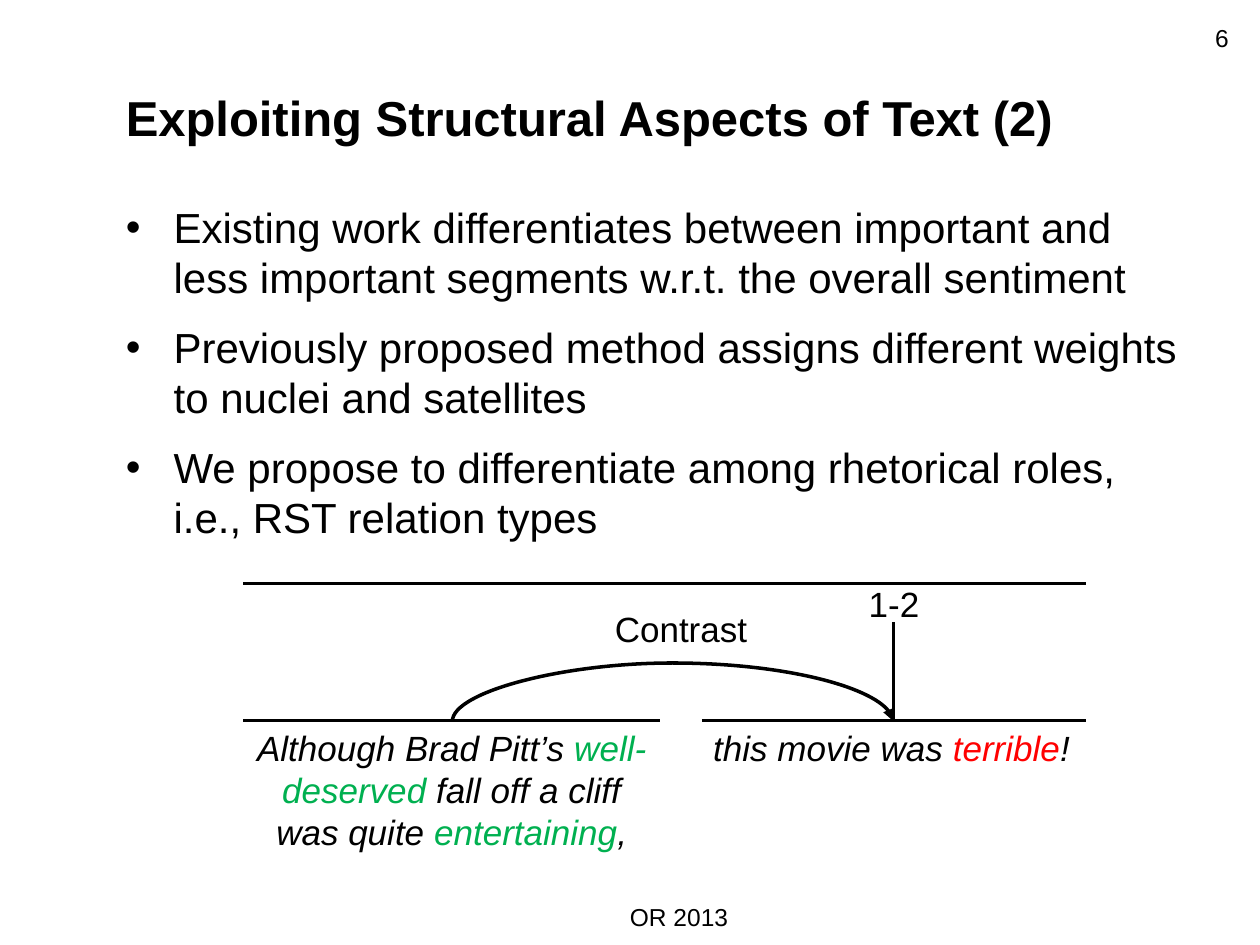
from pptx import Presentation
from pptx.dml.color import RGBColor
from pptx.enum import shapes, text
from pptx.oxml import ns, xmlchemy
from pptx.util import Inches, Pt

BLACK = RGBColor(0x00, 0x00, 0x00)
GREEN = RGBColor(0x00, 0xB0, 0x50)
RED = RGBColor(0xFF, 0x00, 0x00)
LEFT, CENTER, RIGHT = text.PP_ALIGN.LEFT, text.PP_ALIGN.CENTER, text.PP_ALIGN.RIGHT


def add_xml(parent, tag, **attributes):
    element = xmlchemy.OxmlElement(tag)
    for key, value in attributes.items():
        element.set(key, value)
    parent.append(element)
    return element


class SlideWriter:
    font_name = "Arial"
    line_width = Pt(2)

    def __init__(self, slide):
        self.slide = slide

    def text(self, box, paragraphs, size, align=LEFT, bold=None, italic=None,
             wrap=True, middle=False, bullet=False, gap=0):
        """Each paragraph is a list of (wording, colour) runs."""
        frame = self.slide.shapes.add_textbox(*map(Inches, box)).text_frame
        frame.word_wrap = wrap
        if middle:
            frame.vertical_anchor = text.MSO_ANCHOR.MIDDLE
        for index, runs in enumerate(paragraphs):
            paragraph = frame.add_paragraph() if index else frame.paragraphs[0]
            paragraph.alignment = align
            if index and gap:
                paragraph.space_before = Pt(gap)
            if bullet:
                properties = paragraph._p.get_or_add_pPr()
                properties.set("marL", str(Inches(0.38)))
                properties.set("indent", str(-Inches(0.38)))
                add_xml(properties, "a:buFont", typeface=self.font_name)
                add_xml(properties, "a:buChar", char="•")
            font = paragraph.font
            font.name, font.size, font.bold, font.italic = self.font_name, Pt(size), bold, italic
            for wording, colour in runs:
                run = paragraph.add_run()
                run.text = wording
                run.font.color.rgb = colour

    def line(self, start, end, kind=shapes.MSO_CONNECTOR.STRAIGHT):
        connector = self.slide.shapes.add_connector(kind, *map(Inches, start + end))
        connector.line.color.rgb = BLACK
        connector.line.width = self.line_width
        add_xml(connector._element.spPr, "a:effectLst")
        return connector

    def arc_arrow(self, start_x, end_x, base_y, rise):
        """Curved connector turned by 90 degrees, bulging upwards by rise."""
        thickness = 0.01
        middle, half = (start_x + end_x) / 2, (end_x - start_x) / 2
        arc = self.line((middle + thickness / 2, base_y + half),
                        (middle - thickness / 2, base_y - half),
                        shapes.MSO_CONNECTOR.CURVE)
        properties = arc._element.spPr
        properties.find(ns.qn("a:xfrm")).set("rot", str(90 * 60000))
        adjustments = properties.find(ns.qn("a:prstGeom")).get_or_add_avLst()
        add_xml(adjustments, "a:gd", name="adj1",
                fmla=f"val {round(rise / thickness * 100000)}")
        add_xml(arc.line._get_or_add_ln(), "a:tailEnd", type="triangle")


def main():
    deck = Presentation()
    deck.slide_width, deck.slide_height = Inches(10), Inches(7.5)
    writer = SlideWriter(deck.slides.add_slide(deck.slide_layouts[6]))

    # Title and bullets
    writer.text((0.9, 0.3, 8.6, 1.25),
                [[("Exploiting Structural Aspects of Text (2)", BLACK)]],
                28, bold=True, middle=True)
    points = [
        "Existing work differentiates between important and less important "
        "segments w.r.t. the overall sentiment",
        "Previously proposed method assigns different weights to nuclei and satellites",
        "We propose to differentiate among rhetorical roles, i.e., RST relation types",
    ]
    writer.text((0.9, 1.55, 8.6, 5.43), [[(point, BLACK)] for point in points],
                24, bullet=True, gap=11)

    # Page number and footer
    writer.text((9.17, 0.13, 0.68, 0.52), [[("6", BLACK)]], 14, RIGHT)
    writer.text((0.86, 7.11, 9.06, 0.24), [[("OR 2013", BLACK)]], 14, CENTER)

    # Text segments of the rhetorical structure
    tree_left, tree_right = 1.93, 8.62
    top_y, base_y, nucleus_x = 4.63, 5.72, 7.09
    satellite = [("Although Brad Pitt’s ", BLACK), ("well-deserved", GREEN),
                 (" fall off a cliff was quite ", BLACK), ("entertaining", GREEN),
                 (",", BLACK)]
    nucleus = [("this movie was ", BLACK), ("terrible", RED), ("!", BLACK)]
    writer.text((tree_left, base_y, 3.31, 1.11), [satellite], 20, CENTER, italic=True)
    writer.text((5.55, base_y, 3.05, 0.44), [nucleus], 20, CENTER, italic=True, wrap=False)

    # Spans, nucleus stem and relation
    for left, right, y in ((tree_left, 5.24, base_y), (5.57, tree_right, base_y),
                           (tree_left, tree_right, top_y)):
        writer.line((left, y), (right, y))
    writer.line((nucleus_x, 4.94), (nucleus_x, base_y))
    writer.text((6.79, 4.57, 0.61, 0.44), [[("1-2", BLACK)]], 20, CENTER, wrap=False)
    writer.arc_arrow(3.59, 7.08, base_y, 0.47)
    writer.text((3.75, 4.77, 3.31, 0.44), [[("Contrast", BLACK)]], 20, CENTER)

    deck.save("out.pptx")


if __name__ == "__main__":
    main()
